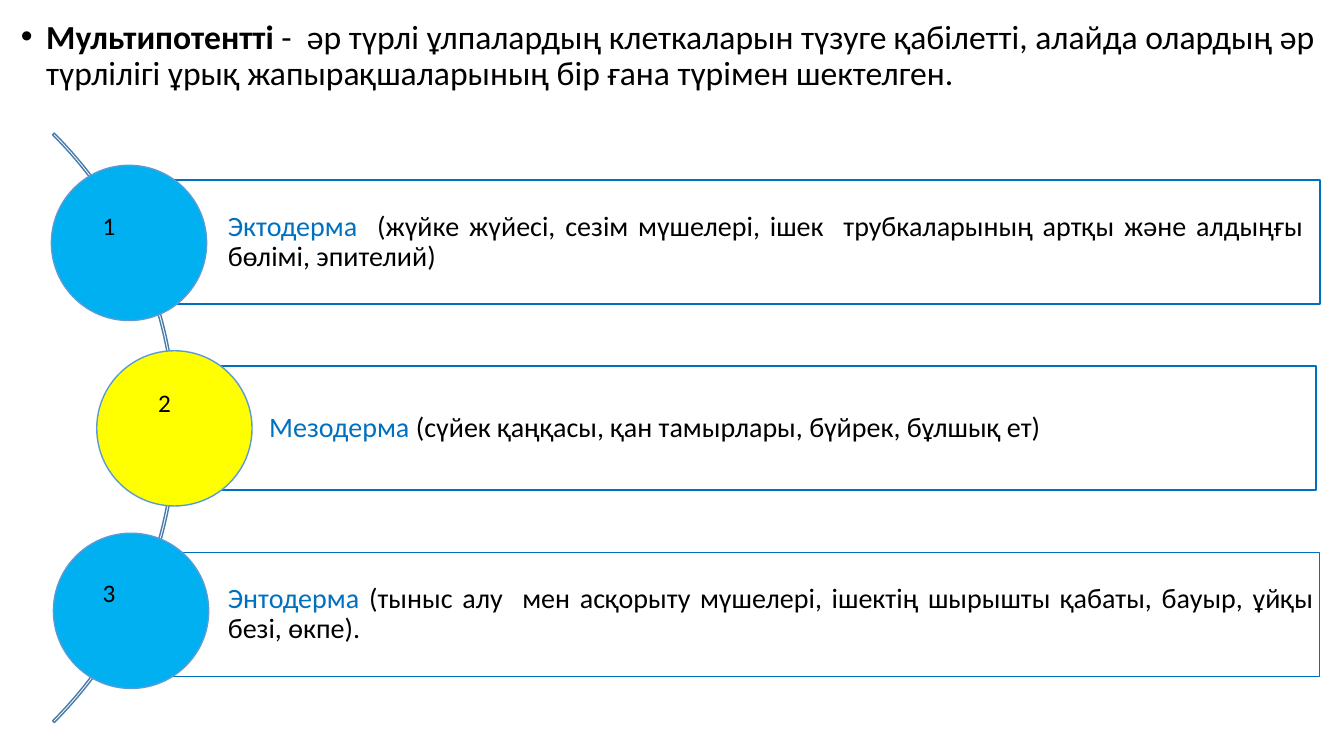
import pptx
import pptx.util
import pptx.dml.color
import pptx.enum.shapes
import pptx.enum.text
from lxml import etree

Inches, Pt = pptx.util.Inches, pptx.util.Pt
RGBColor = pptx.dml.color.RGBColor
MSO_SHAPE = pptx.enum.shapes.MSO_SHAPE
PP_ALIGN = pptx.enum.text.PP_ALIGN
MSO_ANCHOR = pptx.enum.text.MSO_ANCHOR

BLACK = RGBColor(0x00, 0x00, 0x00)
BLUE = RGBColor(0x00, 0x70, 0xC0)
SKY = RGBColor(0x00, 0xB0, 0xF0)
YELLOW = RGBColor(0xFF, 0xFF, 0x00)
RIM = RGBColor(0x5B, 0x9B, 0xD5)
ARC = RGBColor(0x49, 0x7C, 0xAB)

prs = pptx.Presentation()
prs.slide_width, prs.slide_height = Inches(13.33), Inches(7.5)
s = prs.slides.add_slide(prs.slide_layouts[6])


def add_run(p, text, size, color=BLACK, bold=False):
    r = p.add_run()
    r.text = text
    r.font.name, r.font.size, r.font.bold = "Calibri", Pt(size), bold
    r.font.color.rgb = color


def add_outline(kind, x, y, w, h, line, width, fill=None):
    sp = s.shapes.add_shape(kind, Inches(x), Inches(y), Inches(w), Inches(h))
    sp.shadow.inherit = False
    if fill is None:
        sp.fill.background()
    else:
        sp.fill.solid()
        sp.fill.fore_color.rgb = fill
    sp.line.color.rgb = line
    sp.line.width = Pt(width)
    return sp


# Definition with a bullet
tf = s.shapes.add_textbox(Inches(0.11), Inches(0.15), Inches(13.06), Inches(1.03)).text_frame
tf.word_wrap = True
p = tf.paragraphs[0]
p.line_spacing, p.space_before = 0.9, Pt(10)
pPr = p._p.get_or_add_pPr()
pPr.set("marL", str(Inches(0.25)))
pPr.set("indent", str(-Inches(0.25)))
ns = pptx.oxml.ns.qn
etree.SubElement(pPr, ns("a:buFont")).set("typeface", "Arial")
etree.SubElement(pPr, ns("a:buChar")).set("char", "•")
add_run(p, "Мультипотентті ", 24, bold=True)
add_run(p, "-  әр түрлі ұлпалардың клеткаларын түзуге қабілетті, алайда олардың әр "
           "түрлілігі ұрық жапырақшаларының бір ғана түрімен шектелген.", 24)

# Arc linking the circles
arc = add_outline(MSO_SHAPE.BLOCK_ARC, -6.52, 0.11, 8.27, 8.27, ARC, 1)
for i, value in enumerate((189, 27, 0.003)):
    arc.adjustments[i] = value

# Germ layers: box left and width, line width, circle left and top, fill,
# number left, top and width, name, description
layers = [
    (1.28, 11.81, 1.5, 0.51, 1.64, SKY, 0.92, 2.04, 0.69, "Эктодерма",
     "  (жүйке жүйесі, сезім мүшелері, ішек  трубкаларының артқы және алдыңғы  бөлімі, эпителий)"),
    (1.69, 11.36, 1.5, 0.96, 3.48, YELLOW, 1.47, 3.79, 0.48, "Мезодерма ",
     "(сүйек қаңқасы, қан тамырлары, бүйрек, бұлшық ет)"),
    (1.28, 11.81, 1, 0.53, 5.29, SKY, 0.92, 5.68, 0.69, "Энтодерма",
     " (тыныс алу  мен асқорыту мүшелері, ішектің шырышты қабаты, бауыр, ұйқы безі, өкпе)."),
]
for i, (x, w, width, cx, cy, fill, nx, ny, nw, name, description) in enumerate(layers):
    # Box with its text
    box = add_outline(MSO_SHAPE.RECTANGLE, x, 1.79 + 1.845 * i, w, 1.23, BLUE, width)
    tf = box.text_frame
    tf.word_wrap = True
    tf.vertical_anchor = MSO_ANCHOR.MIDDLE
    tf.margin_left = Inches(0.98)
    tf.margin_top = tf.margin_right = tf.margin_bottom = Inches(0.06)
    p = tf.paragraphs[0]
    p.alignment, p.line_spacing = PP_ALIGN.JUSTIFY, 0.9
    add_run(p, name, 20, BLUE)
    add_run(p, description, 20)

    # Circle and its number
    add_outline(MSO_SHAPE.OVAL, cx, cy, 1.54, 1.54, RIM, 1, fill)
    tf = s.shapes.add_textbox(Inches(nx), Inches(ny), Inches(nw), Inches(0.4)).text_frame
    tf.word_wrap = True
    add_run(tf.paragraphs[0], str(i + 1), 18)

prs.save("out.pptx")
